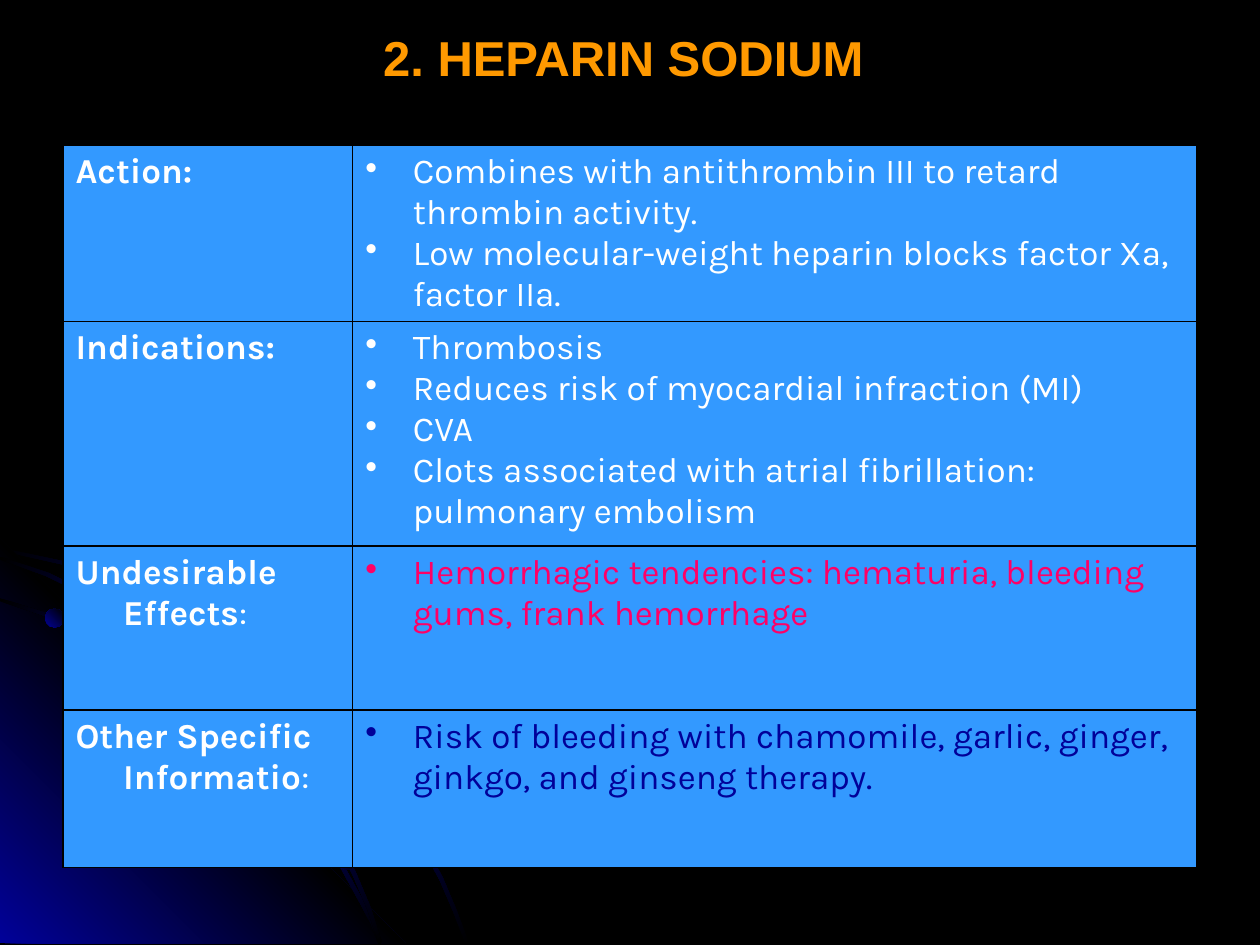
from copy import deepcopy

from lxml import etree
from pptx import Presentation
from pptx.dml.color import RGBColor
from pptx.enum import shapes, text
from pptx.oxml.ns import qn
from pptx.util import Cm, Pt

COLORS = {
    "black": "000000", "navy": "010199", "cell": "3399FF",
    "white": "FFFFFF", "warning": "FF0066", "title": "FF9900",
}
TITLE = "2. HEPARIN SODIUM"
# label, ending in normal weight, bullets, bullet colour, row height in cm
ROWS = [
    ("Action:", "", [
        "Combines with antithrombin III to retard thrombin activity.",
        "Low molecular-weight heparin blocks factor Xa, factor IIa.",
    ], "white", 3.54),
    ("Indications:", "", [
        "Thrombosis",
        "Reduces risk of myocardial infraction (MI)",
        "CVA",
        "Clots associated with atrial fibrillation: pulmonary embolism",
    ], "white", 4.53),
    ("Undesirable Effects", ":", [
        "Hemorrhagic tendencies: hematuria, bleeding gums, frank hemorrhage",
    ], "warning", 3.3),
    ("Other Specific Informatio", ":", [
        "Risk of bleeding with chamomile, garlic, ginger, ginkgo, "
        "and ginseng therapy.",
    ], "navy", 3.18),
]
COLUMN_WIDTHS = [5.84, 17.02]

# Orbit centre lines in cm
OUTER_ORBIT = [
    (0, 11.07), (1.42, 11.38), (2.46, 11.68), (3.45, 12.12), (4.39, 12.65),
    (5.28, 13.26), (6.12, 13.92), (6.88, 14.68), (7.59, 15.52),
    (8.23, 16.46), (8.9, 17.73), (9.17, 18.36), (9.42, 19.02)]
INNER_ORBIT = [
    (0, 12.09), (1.02, 12.42), (1.98, 12.85), (2.95, 13.39), (3.84, 13.97),
    (4.66, 14.66), (5.44, 15.42), (6.12, 16.27), (6.74, 17.18),
    (7.25, 18.11), (7.49, 18.57), (7.67, 19.02)]
MIDDLE_ORBIT = [
    (0, 11.25), (0.95, 11.58), (1.91, 12.04), (2.79, 12.54), (3.63, 13.13),
    (4.42, 13.8), (5.16, 14.58), (5.79, 15.34), (6.43, 16.26),
    (6.81, 16.92), (7.14, 17.61), (7.44, 18.31), (7.67, 19.02)]
GLOW = [(8.18, 19.02), (0, 19.02), (0, 10.85)]
# left, top, diameter in cm, gradient angle
PLANETS = [(0.91, 12.27, 0.38, 45), (6.78, 17.12, 0.41, 315),
           (3.48, 12.01, 0.53, 45)]


def rgb(name):
    return RGBColor.from_string(COLORS[name])


def shade(shape, names, angle):
    """Fill with evenly spaced gradient stops; angle is counter-clockwise."""
    shape.shadow.inherit = False
    shape.line.fill.background()
    fill = shape.fill
    fill.gradient()
    fill.gradient_angle = angle
    stop_list = shape._element.spPr.find(".//" + qn("a:gsLst"))
    for _ in names[2:]:
        stop_list.append(deepcopy(stop_list[-1]))
    for i, (stop, name) in enumerate(zip(fill.gradient_stops, names)):
        stop.position = i / (len(names) - 1)
        stop.color.rgb = rgb(name)


def add_outline(slide, points):
    corners = [(Cm(x), Cm(y)) for x, y in points]
    builder = slide.shapes.build_freeform(*corners[0])
    builder.add_line_segments(corners[1:], close=True)
    return builder.convert_to_shape()


def add_orbit(slide, points, half=0.03):
    upper = [(x + half if x else 0, y - half) for x, y in points]
    lower = [(max(x - half, 0), y + half) for x, y in reversed(points)]
    shade(add_outline(slide, upper + lower), ["black", "navy", "black"], 315)


def add_background(slide):
    slide.background.fill.solid()
    slide.background.fill.fore_color.rgb = rgb("black")
    add_orbit(slide, OUTER_ORBIT)
    shade(add_outline(slide, GLOW), ["navy", "black", "navy"], 45)
    add_orbit(slide, INNER_ORBIT)
    add_orbit(slide, MIDDLE_ORBIT)
    for left, top, size, angle in PLANETS:
        planet = slide.shapes.add_shape(
            shapes.MSO_SHAPE.OVAL, Cm(left), Cm(top), Cm(size), Cm(size))
        shade(planet, ["navy", "black"], angle)


def style(paragraph, color, bold=False, bullet=False):
    props = paragraph._p.get_or_add_pPr()
    props.set("marL", str(Cm(0.96)))
    props.set("indent", str(-Cm(0.96)))
    if bullet:
        etree.SubElement(props, qn("a:buChar")).set("char", "•")
    font = paragraph.font
    font.name, font.size, font.bold = "Karla", Pt(20), bold
    font.color.rgb = rgb(color)


def style_cell(cell):
    props = cell._tc.get_or_add_tcPr()
    for side in ("lnL", "lnR", "lnT", "lnB"):
        border = etree.SubElement(props, qn("a:" + side), w=str(Pt(1)))
        solid = etree.SubElement(border, qn("a:solidFill"))
        etree.SubElement(solid, qn("a:srgbClr"), val=COLORS["black"])
    cell.fill.solid()
    cell.fill.fore_color.rgb = rgb("cell")


def add_drug_table(slide):
    table = slide.shapes.add_table(
        len(ROWS), 2, Cm(1.27), Cm(2.92), Cm(sum(COLUMN_WIDTHS)),
        Cm(sum(row[-1] for row in ROWS))).table
    table.first_row = table.horz_banding = False
    for column, width in zip(table.columns, COLUMN_WIDTHS):
        column.width = Cm(width)
    for row, (label, ending, facts, color, height) in zip(table.rows, ROWS):
        row.height = Cm(height)
        heading, details = row.cells
        style_cell(heading)
        style_cell(details)
        name = heading.text_frame.paragraphs[0]
        name.add_run().text = label
        style(name, "white", bold=True)
        if ending:
            colon = name.add_run()
            colon.text = ending
            colon.font.bold = False
        details.text_frame.text = "\n".join(facts)
        for fact in details.text_frame.paragraphs:
            style(fact, color, bullet=True)


def add_title(slide):
    title = slide.shapes.title
    title.left, title.top = Cm(7.42), Cm(0.43)
    title.width, title.height = Cm(10.29), Cm(1.45)
    frame = title.text_frame
    frame.text = TITLE
    frame.word_wrap = False
    frame.vertical_anchor = text.MSO_ANCHOR.MIDDLE
    heading = frame.paragraphs[0]
    heading.alignment = text.PP_ALIGN.CENTER
    font = heading.font
    font.name, font.size, font.bold = "Arial", Pt(28), True
    font.color.rgb = rgb("title")


def main():
    deck = Presentation()
    deck.slide_width, deck.slide_height = Cm(25.4), Cm(19.05)
    slide = deck.slides.add_slide(deck.slide_layouts.get_by_name("Title Only"))
    add_background(slide)
    add_drug_table(slide)
    add_title(slide)
    deck.save("out.pptx")


if __name__ == "__main__":
    main()
